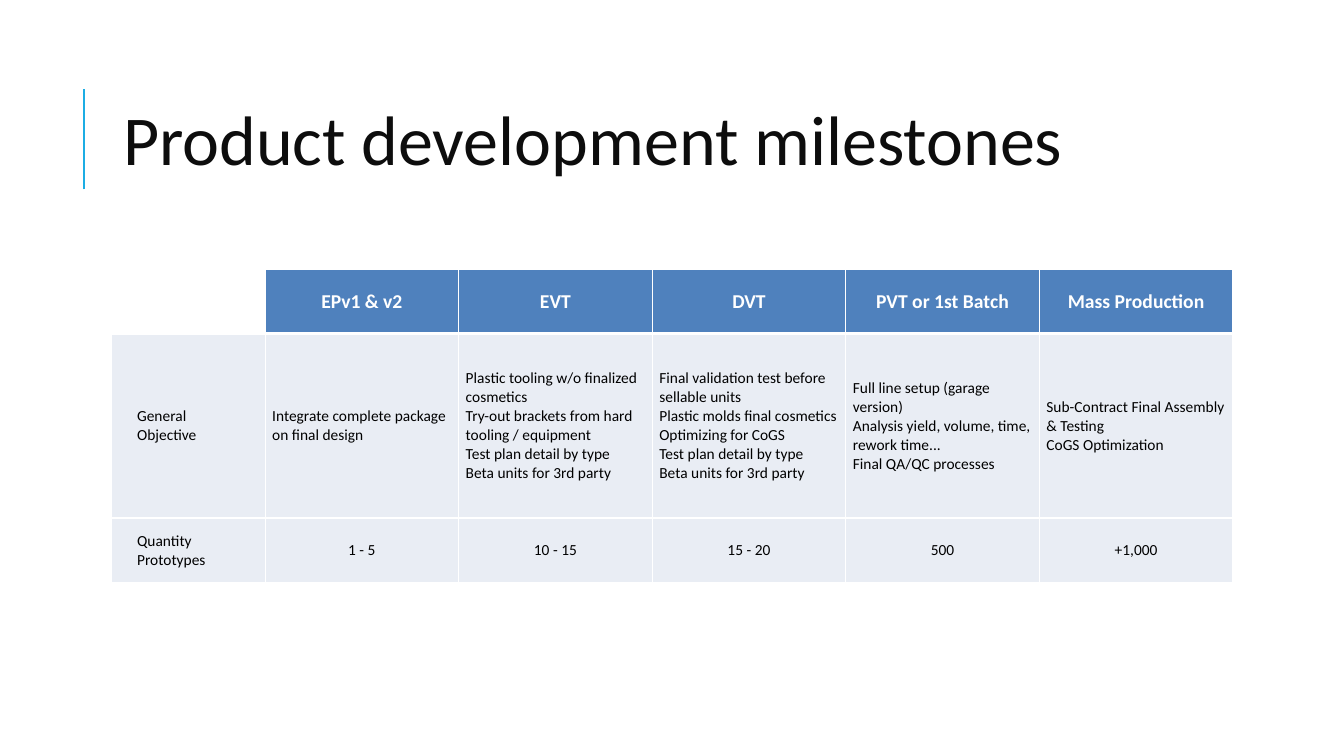
"""Build the product development milestones slide."""
from lxml import etree
from pptx import Presentation
from pptx.dml.color import RGBColor
from pptx.enum.shapes import MSO_CONNECTOR
from pptx.enum.text import MSO_ANCHOR, MSO_AUTO_SIZE, PP_ALIGN
from pptx.oxml.ns import qn
from pptx.util import Inches, Pt

LEFT, CENTER = PP_ALIGN.LEFT, PP_ALIGN.CENTER
MIDDLE = MSO_ANCHOR.MIDDLE
STRAIGHT = MSO_CONNECTOR.STRAIGHT
NO_AUTOFIT = MSO_AUTO_SIZE.NONE

FONT = "Calibri"
WHITE = RGBColor(0xFF, 0xFF, 0xFF)
BLACK = RGBColor(0x00, 0x00, 0x00)
TITLE_INK = RGBColor(0x0D, 0x0D, 0x0D)
ACCENT = RGBColor(0x1C, 0xAD, 0xE4)
HEADER_BLUE = RGBColor(0x4F, 0x81, 0xBD)
BODY_TINT = RGBColor(0xE9, 0xED, 0xF4)

LABEL_WIDTH, STAGE_WIDTH = 1.52, 1.92
ROW_HEIGHTS = [0.64, 1.83, 0.64]
ROWS = [
    ["", "EPv1 & v2", "EVT", "DVT", "PVT or 1st Batch", "Mass Production"],
    [
        "General\nObjective",
        "Integrate complete package on final design",
        "Plastic tooling w/o finalized cosmetics\v"
        "Try-out brackets from hard tooling / equipment\v"
        "Test plan detail by type\vBeta units for 3rd party",
        "Final validation test before sellable units\v"
        "Plastic molds final cosmetics\vOptimizing for CoGS\v"
        "Test plan detail by type\vBeta units for 3rd party",
        "Full line setup (garage version)\v"
        "Analysis yield, volume, time, rework time...\v"
        "Final QA/QC processes",
        "Sub-Contract Final Assembly & Testing\vCoGS Optimization",
    ],
    ["Quantity\nPrototypes", "1 - 5", "10 - 15", "15 - 20", "500", "+1,000"],
]


def format_runs(p, size, color, bold=False):
    for r in p.runs:
        r.font.name = FONT
        r.font.size = Pt(size)
        r.font.bold = bold
        r.font.color.rgb = color


def set_borders(cell, top, bottom):
    tc_pr = cell._tc.get_or_add_tcPr()
    for side, width in (("L", 1), ("R", 1), ("T", top), ("B", bottom)):
        ln = etree.SubElement(tc_pr, qn(f"a:ln{side}"), w=str(Pt(width)))
        fill = etree.SubElement(ln, qn("a:solidFill"))
        etree.SubElement(fill, qn("a:srgbClr"), val=str(WHITE))


prs = Presentation()
prs.slide_width, prs.slide_height = Inches(13.33), Inches(7.5)
slide = prs.slides.add_slide(prs.slide_layouts.get_by_name("Title Only"))

rule = slide.shapes.add_connector(
    STRAIGHT, Inches(0.83), Inches(1.88), Inches(0.83), Inches(0.88))
rule.line.color.rgb = ACCENT
rule.line.width = Pt(1.5)
etree.SubElement(rule._element.spPr, qn("a:effectLst"))

title = slide.shapes.title
title.left, title.top = Inches(1.12), Inches(0.62)
title.width, title.height = Inches(10.63), Inches(1.64)
tf = title.text_frame
tf.text = "Product development milestones"
tf.auto_size = NO_AUTOFIT
tf.vertical_anchor = MIDDLE
p = tf.paragraphs[0]
p.alignment = LEFT
p.line_spacing = 0.8
format_runs(p, 50, TITLE_INK)

stages = len(ROWS[0]) - 1
table = slide.shapes.add_table(
    len(ROWS), stages + 1, Inches(1.11), Inches(2.67),
    Inches(LABEL_WIDTH + stages * STAGE_WIDTH), Inches(sum(ROW_HEIGHTS))).table
table.horz_banding = False
for column, width in zip(table.columns, [LABEL_WIDTH] + [STAGE_WIDTH] * stages):
    column.width = Inches(width)

for row, (texts, height) in enumerate(zip(ROWS, ROW_HEIGHTS)):
    table.rows[row].height = Inches(height)
    header = row == 0
    for col, text in enumerate(texts):
        cell = table.cell(row, col)
        cell.margin_left = cell.margin_right = 0
        cell.margin_top = cell.margin_bottom = 0
        cell.vertical_anchor = MIDDLE
        set_borders(cell, 3 if row == 1 else 1, 3 if header else 1)
        if header and col == 0:
            cell.fill.background()
            continue
        cell.fill.solid()
        cell.fill.fore_color.rgb = HEADER_BLUE if header else BODY_TINT
        cell.text_frame.text = text
        for p in cell.text_frame.paragraphs:
            p.alignment = CENTER if col and row != 1 else LEFT
            if p.alignment == LEFT:
                indent = 0.07 if col else 0.25
                p._p.get_or_add_pPr().set("marL", str(Inches(indent)))
            format_runs(p, 14 if header else 11, WHITE if header else BLACK, header)

prs.save("out.pptx")
